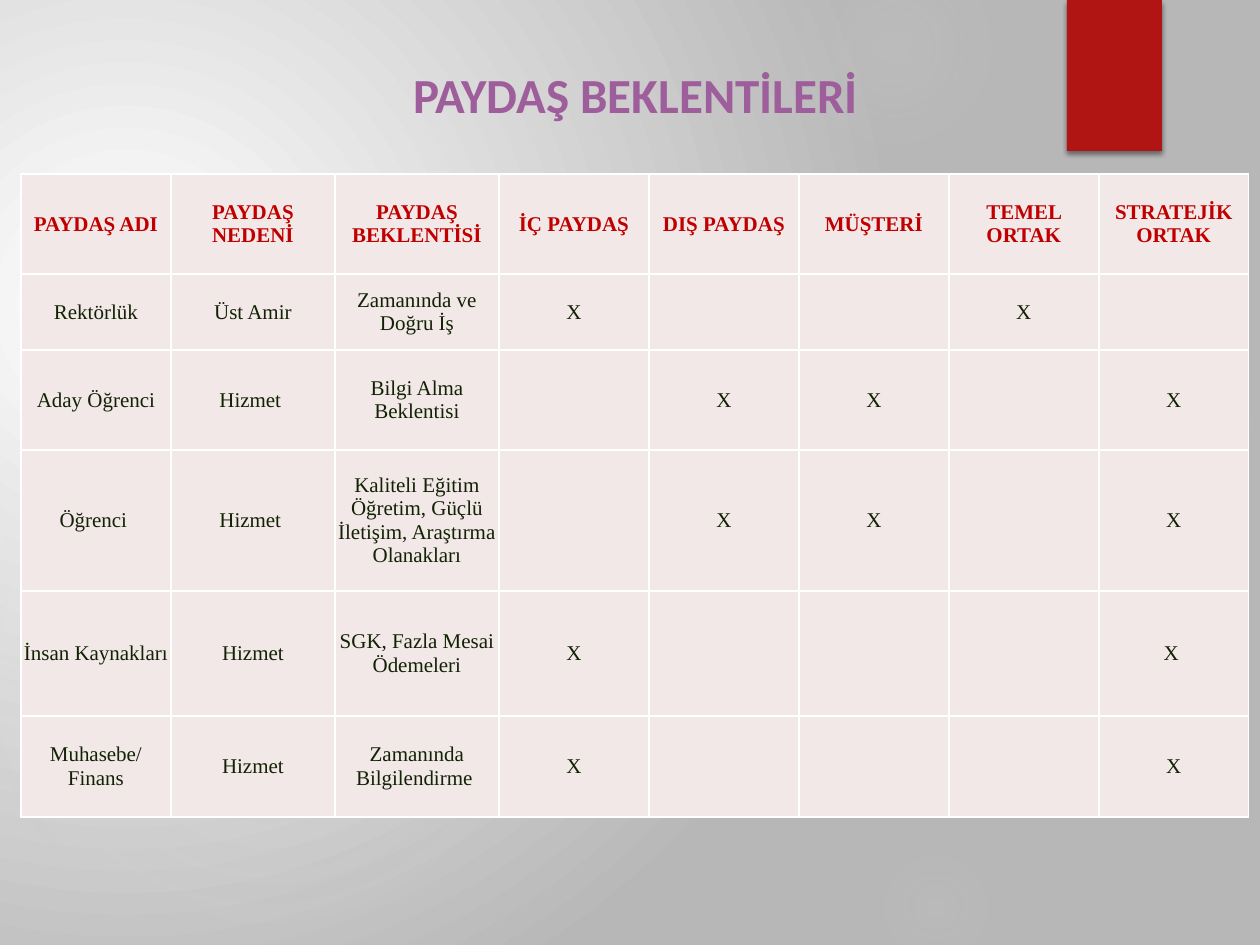
from dataclasses import dataclass

from lxml.etree import SubElement
from pptx import Presentation
from pptx.dml.color import RGBColor as RGB
from pptx.enum.shapes import MSO_SHAPE as SHAPE
from pptx.enum.text import MSO_ANCHOR as ANCHOR, MSO_AUTO_SIZE as AUTO, PP_ALIGN as ALIGN
from pptx.oxml.ns import qn
from pptx.util import Emu, Pt

SCALE = 914400 / 126  # EMU per px


def px(n):
    return Emu(round(n * SCALE))


@dataclass(frozen=True)
class Theme:
    title_font: str = "Calibri"
    table_font: str = "Times New Roman"
    title_size: int = 28
    table_size: int = 12
    title: str = "9E5E9B"
    header: str = "C00000"
    body: str = "122204"
    cell: str = "F2E8E7"
    border: str = "FFFFFF"
    ribbon: str = "B01513"
    glow: str = "D9D9D9"
    bg_center: str = "FFFFFF"
    bg_edge: str = "B7B7B7"


def add_color(parent, color, alpha=100):
    clr = SubElement(parent, qn("a:srgbClr"), val=color)
    if alpha < 100:
        SubElement(clr, qn("a:alpha"), val=str(alpha * 1000))


def radial_fill(fill, element, stops, center):
    """Circular gradient; stops are (position, color, alpha) in percent."""
    fill.gradient()
    grad = element.find(".//" + qn("a:gradFill"))
    for child in list(grad):
        grad.remove(child)
    gs_list = SubElement(grad, qn("a:gsLst"))
    for pos, color, alpha in stops:
        add_color(SubElement(gs_list, qn("a:gs"), pos=str(pos * 1000)), color, alpha)
    circle = SubElement(grad, qn("a:path"), path="circle")
    rect = SubElement(circle, qn("a:fillToRect"))
    for side, value in zip("ltrb", center):
        rect.set(side, str(value * 1000))


class Deck:
    def __init__(self, theme, width, height):
        self.theme = theme
        self.prs = Presentation()
        self.prs.slide_width, self.prs.slide_height = px(width), px(height)
        self.s = self.prs.slides.add_slide(self.prs.slide_layouts[5])

    def background(self, center):
        t = self.theme
        stops = [(0, t.bg_center, 100), (100, t.bg_edge, 100)]
        radial_fill(self.s.background.fill, self.s._element, stops, center)

    def shape(self, kind, x, y, w, h):
        sp = self.s.shapes.add_shape(kind, px(x), px(y), px(w), px(h))
        sp.shadow.inherit = False
        sp.line.fill.background()
        return sp

    def glow(self, x, y, size, alphas, fade):
        sp = self.shape(SHAPE.OVAL, x, y, size, size)
        stops = [(pos, self.theme.glow, a) for pos, a in zip((0, 36, fade), (*alphas, 0))]
        radial_fill(sp.fill, sp._element, stops, (50, 50, 50, 50))

    def ribbon(self, x, y, w, h):
        sp = self.shape(SHAPE.RECTANGLE, x, y, w, h)
        sp.fill.solid()
        sp.fill.fore_color.rgb = RGB.from_string(self.theme.ribbon)
        effects = sp._element.spPr.find(qn("a:effectLst"))
        shadow = SubElement(effects, qn("a:outerShdw"), blurRad=str(Pt(3)),
                            dist=str(Pt(2)), dir="5400000", rotWithShape="0")
        add_color(shadow, "000000", 45)

    def add_text(self, p, text, font, size, color, bold):
        p.alignment = ALIGN.CENTER
        for i, line in enumerate(text.split("\n")):
            if i:
                p.add_line_break()
            r = p.add_run()
            r.text = line
            r.font.name, r.font.size, r.font.bold = font, Pt(size), bold
            r.font.color.rgb = RGB.from_string(color)

    def title(self, text, x, y, w, h):
        t = self.theme
        sp = self.s.shapes.title
        sp.left, sp.top, sp.width, sp.height = px(x), px(y), px(w), px(h)
        self.s.shapes._spTree.append(sp._element)  # in front of the glows
        tf = sp.text_frame
        tf.word_wrap, tf.auto_size = True, AUTO.SHAPE_TO_FIT_TEXT
        self.add_text(tf.paragraphs[0], text, t.title_font, t.title_size, t.title, True)

    def cell(self, cell, text, header):
        t = self.theme
        cell.margin_left = cell.margin_right = cell.margin_top = cell.margin_bottom = 0
        cell.vertical_anchor = ANCHOR.MIDDLE
        tc_pr = cell._tc.get_or_add_tcPr()
        for side in "LRTB":
            ln = SubElement(tc_pr, qn("a:ln" + side), w=str(Pt(1)))
            add_color(SubElement(ln, qn("a:solidFill")), t.border)
        cell.fill.solid()
        cell.fill.fore_color.rgb = RGB.from_string(t.cell)
        if text:
            self.add_text(cell.text_frame.paragraphs[0], text, t.table_font, t.table_size,
                          t.header if header else t.body, header)

    def table(self, data, x, y, widths, heights):
        tbl = self.s.shapes.add_table(len(heights), len(widths), px(x), px(y),
                                      px(sum(widths)), px(sum(heights))).table
        tbl.first_row = tbl.horz_banding = False
        for col, w in zip(tbl.columns, widths):
            col.width = px(w)
        for i, (row, h) in enumerate(zip(data, heights)):
            tbl.rows[i].height = px(h)
            for j, text in enumerate(row):
                self.cell(tbl.cell(i, j), text, header=i == 0)


GLOWS = [  # x, y, size, inner alphas, fade-out position
    (868, 231, 388, (7, 6), 69),
    (784, -63, 220, (14, 7), 73),
    (868, 840, 136, (9, 5), 66),
    (-21, 368, 577, (11, 10), 75),
    (-116, 399, 325, (8, 8), 72),
]

STAKEHOLDERS = [
    ("PAYDAŞ ADI", "PAYDAŞ NEDENİ", "PAYDAŞ BEKLENTİSİ", "İÇ PAYDAŞ", "DIŞ PAYDAŞ",
     "MÜŞTERİ", "TEMEL ORTAK", "STRATEJİK ORTAK"),
    ("Rektörlük", "Üst Amir", "Zamanında ve Doğru İş", "X", "", "", "X", ""),
    ("Aday Öğrenci", "Hizmet ", "Bilgi Alma Beklentisi", "", "X", "X", "", "X"),
    ("Öğrenci ", "Hizmet ", "Kaliteli Eğitim Öğretim, Güçlü İletişim, Araştırma Olanakları",
     "", "X", "X", "", "X"),
    ("İnsan Kaynakları", "Hizmet", "SGK, Fazla Mesai Ödemeleri", "X", "", "", "", "X "),
    ("Muhasebe/\nFinans", "Hizmet", "Zamanında Bilgilendirme ", "X", "", "", "", "X"),
]


def main():
    deck = Deck(Theme(), 1260, 945)

    # Backdrop
    deck.background((45, 65, 125, 100))
    for glow in GLOWS:
        deck.glow(*glow)
    deck.ribbon(1067, 0, 95, 151)

    # Title
    deck.title("PAYDAŞ BEKLENTİLERİ", 286, 58, 699, 72)

    # Stakeholder table
    deck.table(STAKEHOLDERS, 21, 174, [150, 164, 164] + [150] * 5,
               [100, 76, 100, 141, 125, 101])

    deck.prs.save("out.pptx")


if __name__ == "__main__":
    main()
